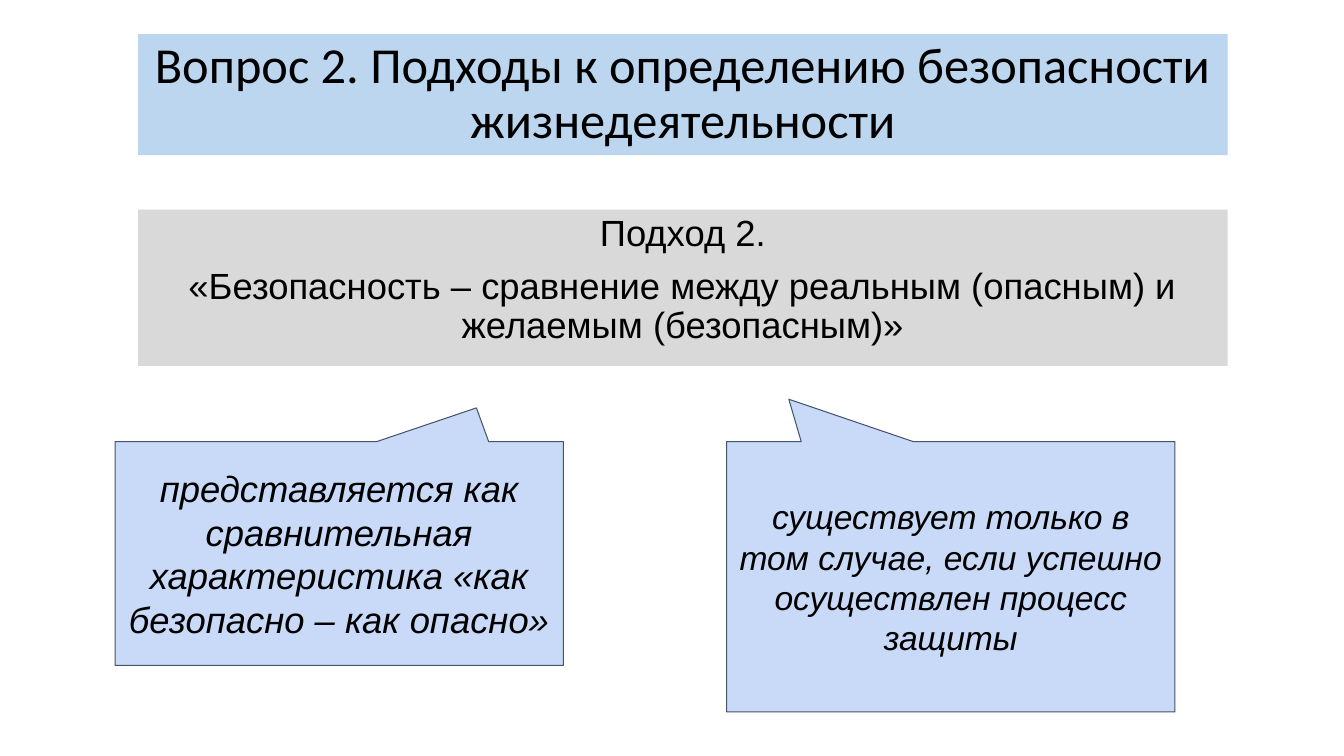
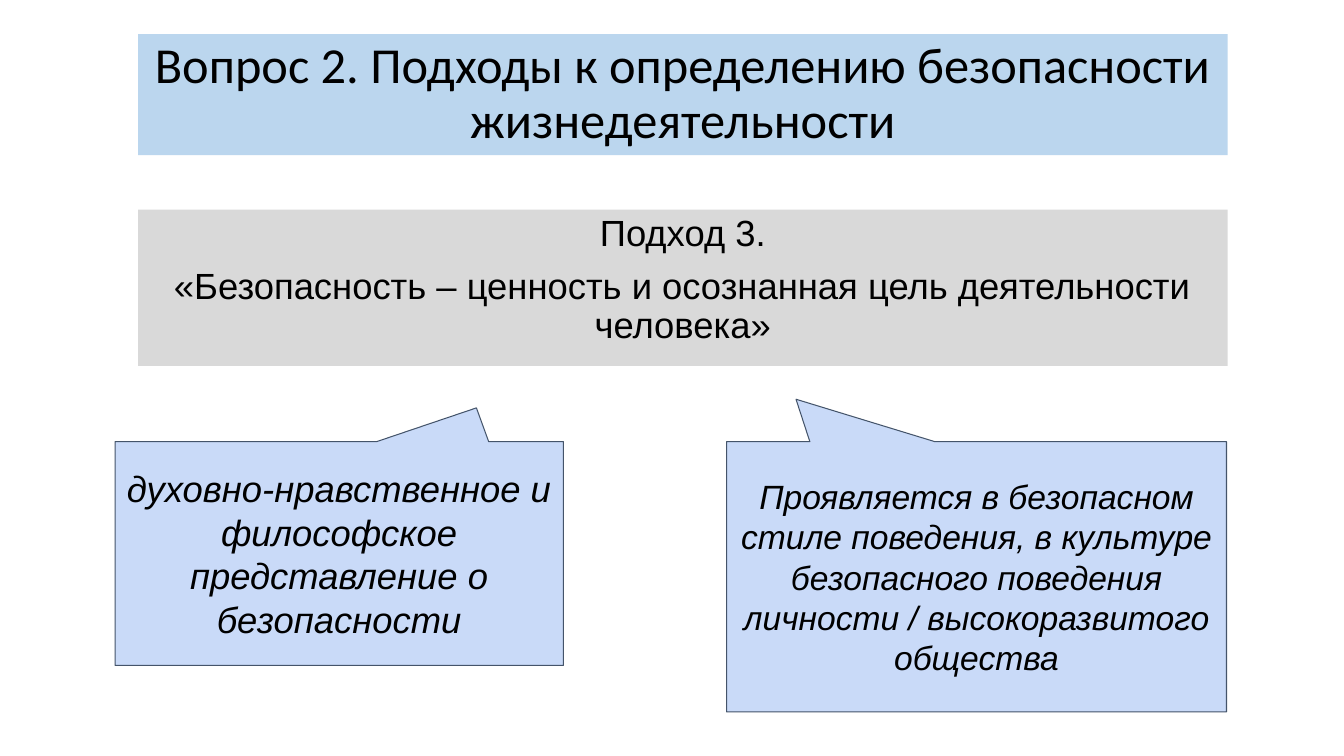
from pptx import Presentation
from pptx import util as u
from pptx.dml.color import RGBColor
from pptx.enum import shapes, text
from pptx.oxml.xmlchemy import OxmlElement

# Shared style
BLACK = "000000"
TITLE_FILL = "BBD6EE"
BODY_FILL = "D9D9D9"
CALLOUT_FILL = "C9DAF8"
CALLOUT_LINE = "44546A"
BAND_LEFT, BAND_WIDTH = 3.48, 27.46
CALLOUT_TOP = 11.13
TITLE = "Вопрос 2. Подходы к определению безопасности жизнедеятельности"

# Content: approach, definition, left callout, right callout, right callout width
APPROACHES = [
    ("Подход 2.",
     "«Безопасность – сравнение между реальным (опасным) и желаемым (безопасным)»",
     "представляется как сравнительная характеристика «как безопасно – как опасно»",
     "существует только в том случае, если успешно осуществлен процесс защиты",
     11.3),
    ("Подход 3.",
     "«Безопасность – ценность и осознанная цель деятельности человека»",
     "духовно-нравственное и философское представление о безопасности",
     "Проявляется в безопасном стиле поведения, в культуре безопасного поведения "
     "личности / высокоразвитого общества",
     12.6),
]


def color(hex_value):
    return RGBColor.from_string(hex_value)


def fill(shape, hex_value):
    shape.fill.solid()
    shape.fill.fore_color.rgb = color(hex_value)


def set_frame(shape, anchor, vertical_inset):
    frame = shape.text_frame
    frame.word_wrap = True
    frame.auto_size = text.MSO_AUTO_SIZE.NONE
    frame.vertical_anchor = anchor
    frame.margin_left = frame.margin_right = u.Cm(0.25)
    frame.margin_top = frame.margin_bottom = u.Cm(vertical_inset)
    return frame


def write(paragraph, words, size, font="Arial", italic=False):
    paragraph.alignment = text.PP_ALIGN.CENTER
    run = paragraph.add_run()
    run.text = words
    run.font.name = font
    run.font.size = u.Pt(size)
    run.font.italic = italic
    run.font.color.rgb = color(BLACK)


def remove_bullet(paragraph):
    properties = paragraph._p.get_or_add_pPr()
    properties.set("marL", "0")
    properties.set("indent", "0")
    properties.append(OxmlElement("a:buNone"))


def add_band(placeholder, top, height, fill_color, anchor, lines, size, font):
    """Turn a placeholder into a full-width coloured band."""
    placeholder.left, placeholder.top = u.Cm(BAND_LEFT), u.Cm(top)
    placeholder.width, placeholder.height = u.Cm(BAND_WIDTH), u.Cm(height)
    fill(placeholder, fill_color)
    frame = set_frame(placeholder, anchor, 0.13)
    for index, line in enumerate(lines):
        paragraph = frame.add_paragraph() if index else frame.paragraphs[0]
        remove_bullet(paragraph)
        paragraph.line_spacing = 0.9
        paragraph.space_before = u.Pt(10 if index else 0)
        write(paragraph, line, size, font)


def add_callout(slide, left, width, height, pointer, words, size):
    shape = slide.shapes.add_shape(
        shapes.MSO_SHAPE.ROUNDED_RECTANGULAR_CALLOUT,
        u.Cm(left), u.Cm(CALLOUT_TOP), u.Cm(width), u.Cm(height))
    shape.shadow.inherit = False
    for index, value in enumerate((*pointer, 0)):  # last value: square corners
        shape.adjustments[index] = value
    fill(shape, CALLOUT_FILL)
    shape.line.color.rgb = color(CALLOUT_LINE)
    shape.line.width = u.Pt(0.75)
    frame = set_frame(shape, text.MSO_ANCHOR.MIDDLE, 0.25)
    write(frame.paragraphs[0], words, size, italic=True)


def add_approach(presentation, name, definition, left_words, right_words, right_width):
    slide = presentation.slides.add_slide(presentation.slide_layouts[1])
    add_band(slide.shapes.title, 0.86, 3.05, TITLE_FILL,
             text.MSO_ANCHOR.MIDDLE, [TITLE], 36, "Calibri")
    add_band(slide.placeholders[1], 5.28, 3.94, BODY_FILL,
             text.MSO_ANCHOR.TOP, [name, definition], 26, "Arial")
    add_callout(slide, 2.9, 11.3, 5.64, (0.306, -0.651), left_words, 26)
    add_callout(slide, 18.31, right_width, 6.81, (-0.361, -0.657), right_words, 24)


def main():
    presentation = Presentation()
    presentation.slide_width = u.Cm(33.87)
    presentation.slide_height = u.Cm(19.05)
    for approach in APPROACHES:
        add_approach(presentation, *approach)
    presentation.save("out.pptx")


if __name__ == "__main__":
    main()
